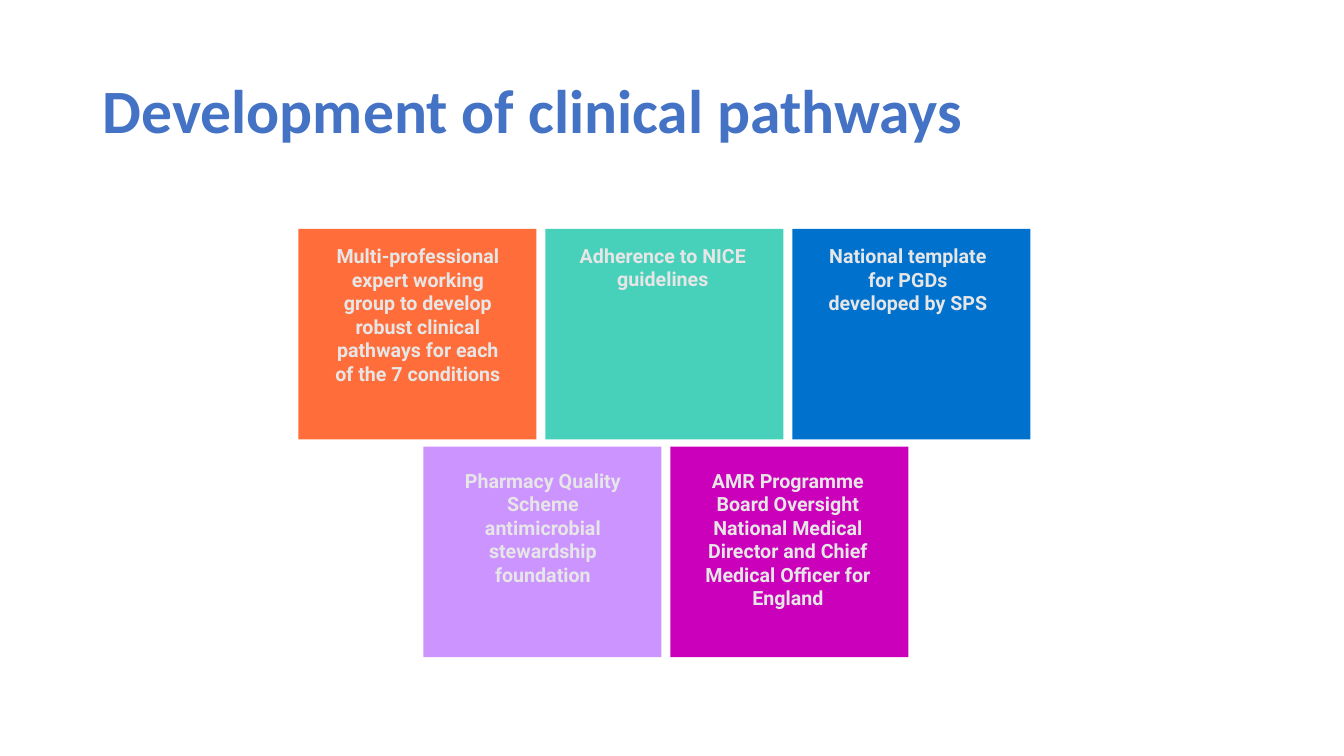
from pptx import Presentation
from pptx.util import Inches, Pt
from pptx.dml.color import RGBColor as RGB
from pptx.enum.shapes import MSO_SHAPE as Shape
from pptx.enum.text import MSO_ANCHOR as Anchor, MSO_AUTO_SIZE as Auto, PP_ALIGN as Align

TITLE = "Development of clinical pathways"
ROWS = [
    {"left": 2.96, "top": 2.27, "drop": 0.1, "cards": [
        ("FF6D3A", 1.99, "Multi-professional expert working group to develop "
         "robust clinical pathways for each of the 7 conditions"),
        ("47D1BA", 0.57, "Adherence to NICE guidelines"),
        ("0072CE", 0.81, "National template for PGDs developed by SPS"),
    ]},
    {"left": 4.2, "top": 4.43, "drop": 0.17, "cards": [
        ("CC94FF", 1.28, "Pharmacy Quality Scheme antimicrobial stewardship foundation"),
        ("CB00BA", 1.51, "AMR Programme Board Oversight National Medical Director "
         "and Chief Medical Officer for England"),
    ]},
]
CARD_W, CARD_H, STEP = 2.36, 2.09, 2.45
TEXT_W, TEXT_IN, TEXT_STEP = 1.93, 0.22, 2.43
HEAD = {"name": "Calibri", "size": Pt(44), "bold": True}
BODY = {"name": "Roboto", "size": Pt(14), "bold": True}


def color(value):
    return RGB.from_string(value)


def write(slide, place, text, font, ink, frame, para):
    box = slide.shapes.add_textbox(*map(Inches, place)).text_frame
    line = box.paragraphs[0]
    run = line.add_run()
    run.text = text
    run.font.color.rgb = color(ink)
    for part, style in ((box, frame), (line, para), (run.font, font)):
        for key, value in style.items():
            setattr(part, key, value)


def draw_card(slide, left, top, fill):
    card = slide.shapes.add_shape(
        Shape.RECTANGLE, *map(Inches, (left, top, CARD_W, CARD_H)))
    card.shadow.inherit = False
    card.fill.solid()
    card.fill.fore_color.rgb = color(fill)
    card.line.fill.background()


def main():
    deck = Presentation()
    deck.slide_width, deck.slide_height = Inches(13.33), Inches(7.5)
    slide = deck.slides.add_slide(deck.slide_layouts[6])
    write(slide, (0.92, 0.4, 11.5, 1.45), TITLE, HEAD, "4472C4",
          {"word_wrap": True, "vertical_anchor": Anchor.MIDDLE},
          {"line_spacing": 0.9})
    for row in ROWS:
        left, top = row["left"], row["top"]
        for col, (fill, height, text) in enumerate(row["cards"]):
            draw_card(slide, left + col * STEP, top, fill)
            place = (left + TEXT_IN + col * TEXT_STEP, top + row["drop"], TEXT_W, height)
            write(slide, place, text, BODY, "E7E6E6",
                  {"word_wrap": True, "auto_size": Auto.SHAPE_TO_FIT_TEXT},
                  {"alignment": Align.CENTER})
    deck.save("out.pptx")


if __name__ == "__main__":
    main()
